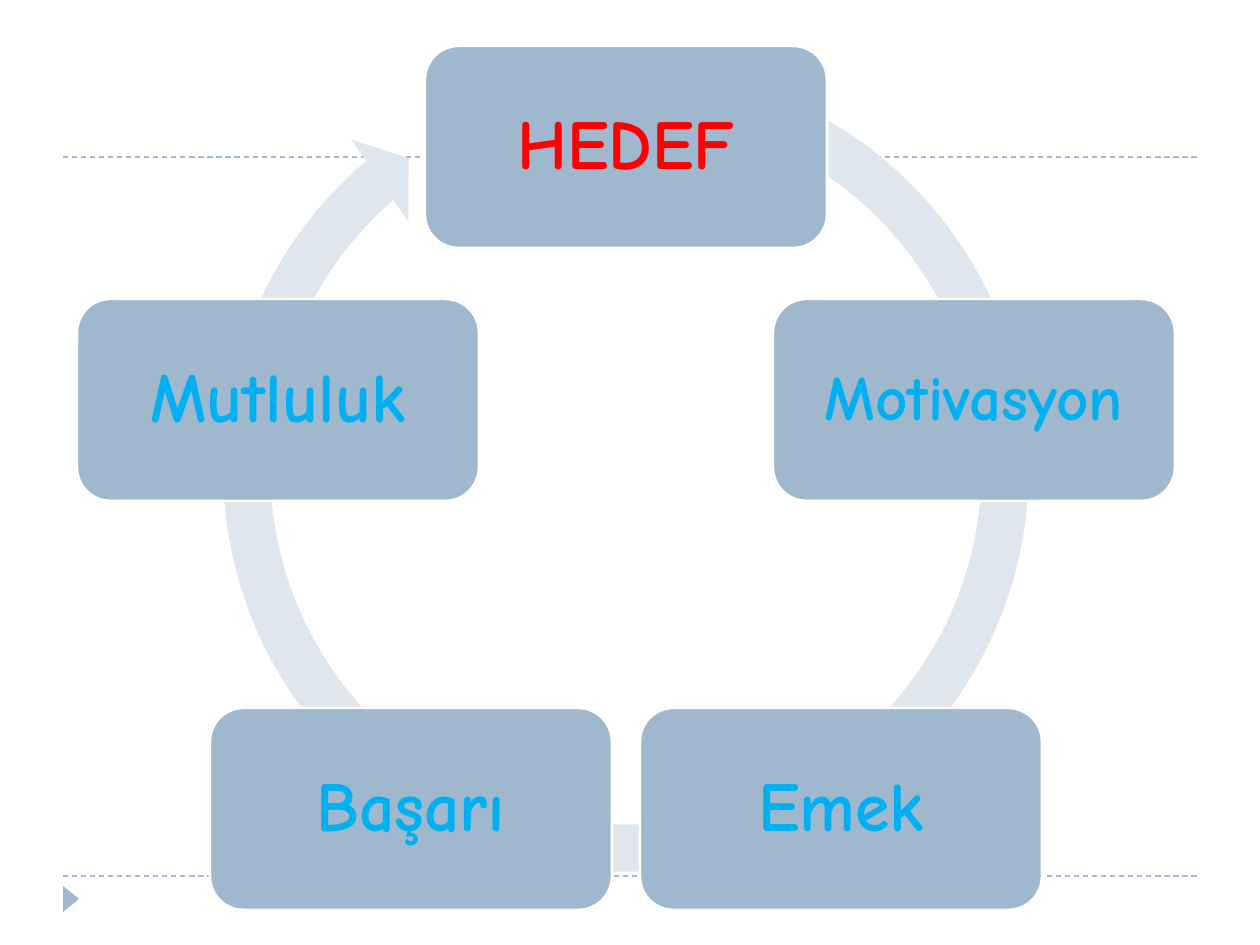
from math import cos, pi, sin

from lxml.etree import SubElement
from pptx import Presentation
from pptx.dml.color import RGBColor
from pptx.enum.dml import MSO_LINE
from pptx.enum.shapes import MSO_CONNECTOR, MSO_SHAPE
from pptx.enum.text import MSO_ANCHOR, PP_ALIGN
from pptx.oxml.ns import qn
from pptx.util import Pt

PX = 914400 // 126
BLUE, PALE, WHITE, RED, CYAN = "9FB8CD", "DFE6ED", "FFFFFF", "FF0000", "00B0F0"
STEPS = [
    ("HEDEF", 40, RED),
    ("Motivasyon", 36, CYAN),
    ("Emek", 40, CYAN),
    ("Başarı", 40, CYAN),
    ("Mutluluk", 40, CYAN),
]


def px(n):
    """Turn pixels into whole EMU."""
    return round(n) * PX


def paint(fmt, color):
    """Give a font, or a fill, a solid colour."""
    if hasattr(fmt, "solid"):
        fmt.solid()
        fmt.fore_color.rgb = RGBColor.from_string(color)
    else:
        fmt.color.rgb = RGBColor.from_string(color)


def assign(obj, values):
    """Set each attribute in a dict of format values."""
    for name, value in values.items():
        setattr(obj, name, value)


def add_shape(s, kind, box, fill, line=None):
    """Add a flat preset shape in a pixel box."""
    sp = s.shapes.add_shape(kind, *map(px, box))
    sp.shadow.inherit = False
    paint(sp.fill, fill)
    if line:
        paint(sp.line.fill, line)
        sp.line.width = Pt(1.5)
    else:
        sp.line.fill.background()
    return sp


def add_rule(s, x, y, width):
    """Draw a dashed horizontal rule."""
    rule = s.shapes.add_connector(
        MSO_CONNECTOR.STRAIGHT, px(x), px(y), px(x + width), px(y))
    paint(rule.line.fill, BLUE)
    assign(rule.line, {"width": Pt(0.75), "dash_style": MSO_LINE.DASH})
    SubElement(rule._element.spPr, qn("a:effectLst"))


def add_frame(s, x, y, width, height):
    """Place the two rules and the corner marker of the page."""
    add_rule(s, x, y + height, width)
    add_rule(s, x, y, width)
    marker = add_shape(
        s, MSO_SHAPE.ISOSCELES_TRIANGLE, (x - 5, y + height + 15, 26, 16), BLUE)
    marker.rotation = 90


def add_step(s, box, label, size, color):
    """Place one rounded step with its centred label."""
    sp = add_shape(s, MSO_SHAPE.ROUNDED_RECTANGLE, box, BLUE, WHITE)
    tf = sp.text_frame
    assign(tf, {"word_wrap": True, "vertical_anchor": MSO_ANCHOR.MIDDLE})
    sides = ("left", "top", "right", "bottom")
    assign(tf, {f"margin_{side}": px(20) for side in sides})
    p = tf.paragraphs[0]
    assign(p, {"alignment": PP_ALIGN.CENTER, "line_spacing": 0.9})
    r = p.add_run()
    r.text = label
    assign(r.font, {"name": "Comic Neue", "size": Pt(size), "bold": True})
    paint(r.font, color)


def add_cycle(s, x, y, size, steps):
    """Place the circular arrow and spread the steps evenly around it."""
    ring = add_shape(s, MSO_SHAPE.CIRCULAR_ARROW, (x, y, size, size), PALE)
    for i, value in enumerate((0.055, 3.307, 137.716, 173.886, 0.058)):
        ring.adjustments[i] = value
    width, height, radius = 402, 202, 366
    center_x, center_y = x + size / 2, y + 473
    for i, step in enumerate(steps):
        angle = 2 * pi * i / len(steps)
        left = center_x + radius * sin(angle) - width / 2
        top = center_y - radius * cos(angle) - height / 2
        add_step(s, (left, top, width, height), *step)


def main():
    """Build and save the slide."""
    prs = Presentation()
    assign(prs, {"slide_width": px(1260), "slide_height": px(945)})
    s = prs.slides.add_slide(prs.slide_layouts[6])
    add_frame(s, 63, 157, 1134, 719)
    add_cycle(s, 197, 40, 858, STEPS)
    prs.save("out.pptx")


if __name__ == "__main__":
    main()
